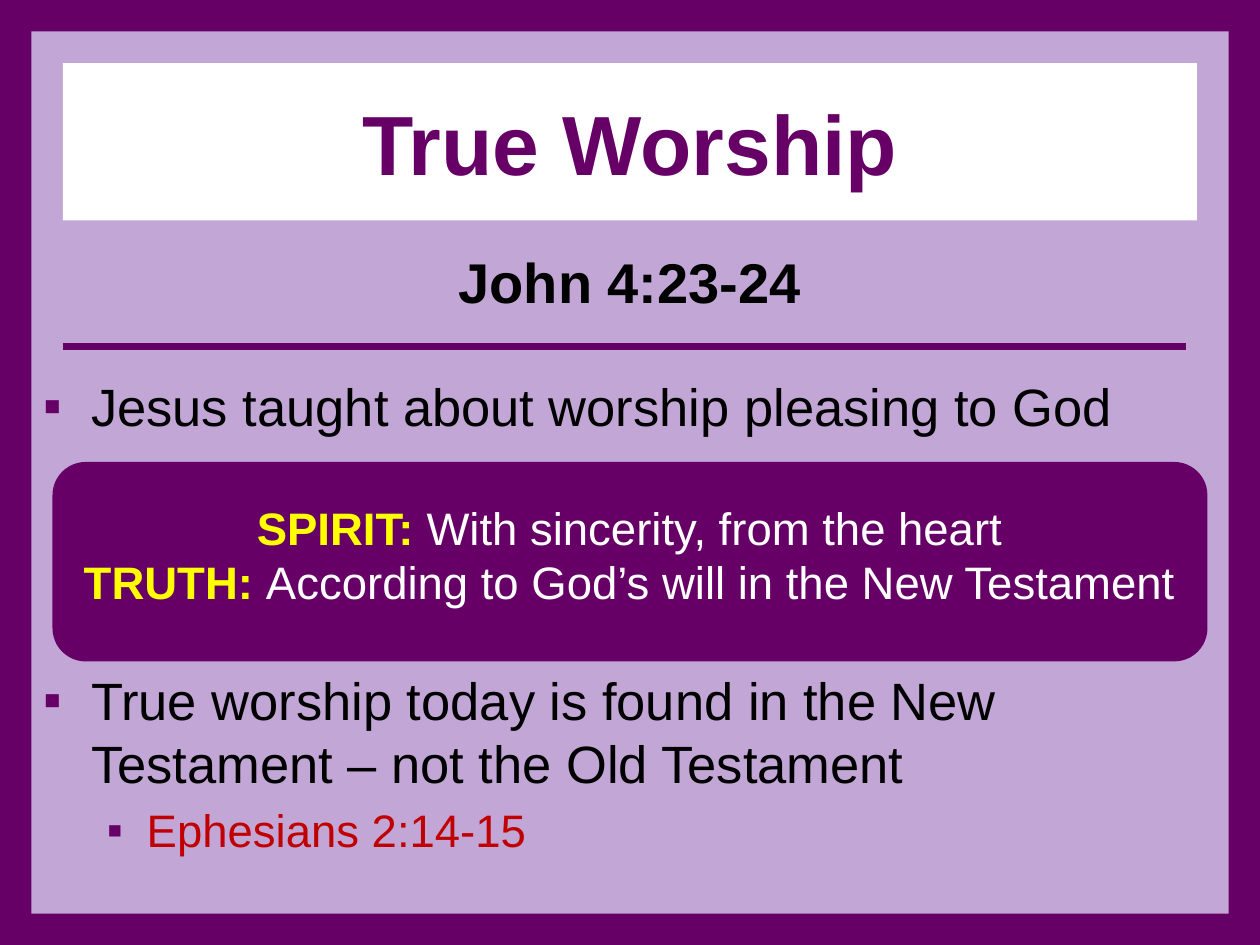
from lxml import etree
from pptx import Presentation
from pptx import util as u
from pptx.dml.color import RGBColor
from pptx.enum import shapes, text
from pptx.oxml.ns import qn

PX = 7620
PURPLE = RGBColor(0x66, 0x00, 0x66)
LILAC = RGBColor(0xC2, 0xA6, 0xD6)
WHITE = RGBColor(0xFF, 0xFF, 0xFF)
BLACK = RGBColor(0x00, 0x00, 0x00)
YELLOW = RGBColor(0xFF, 0xFF, 0x00)
RED = RGBColor(0xC0, 0x00, 0x00)


def add_block(kind, box, fill):
    shape = slide.shapes.add_shape(kind, *[value * PX for value in box])
    shape.shadow.inherit = False
    shape.fill.solid()
    shape.fill.fore_color.rgb = fill
    shape.line.fill.background()
    return shape


def style(paragraph, size, color=None, bold=None, align=None):
    paragraph.alignment = align
    paragraph.font.name = "Arial"
    paragraph.font.size = u.Pt(size)
    paragraph.font.bold = bold
    if color is not None:
        paragraph.font.color.rgb = color


presentation = Presentation()
presentation.slide_width = 1200 * PX
presentation.slide_height = 900 * PX
slide = presentation.slides.add_slide(presentation.slide_layouts[6])
slide.background.fill.solid()
slide.background.fill.fore_color.rgb = LILAC

RECTANGLE = shapes.MSO_SHAPE.RECTANGLE
CENTER = text.PP_ALIGN.CENTER

title = add_block(RECTANGLE, (60, 60, 1080, 150), WHITE)
title.text_frame.vertical_anchor = text.MSO_ANCHOR.MIDDLE
title.text_frame.text = "True Worship"
style(title.text_frame.paragraphs[0], 48, PURPLE, True, CENTER)

body = slide.shapes.add_textbox(30 * PX, 350 * PX, 1140 * PX, 510 * PX).text_frame
body.word_wrap = True
points = [
    ("Jesus taught about worship pleasing to God", 0, 30, BLACK, 0, 45, 45),
    ("True worship today is found in the New Testament – not the Old Testament",
     0, 30, BLACK, 132, 45, 45),
    ("Ephesians 2:14-15", 1, 26, RED, 5, 98, 38),
]
for index, (wording, level, size, color, before, margin, hanging) in enumerate(points):
    paragraph = body.paragraphs[0] if index == 0 else body.add_paragraph()
    paragraph.text = wording
    paragraph.level = level
    paragraph.space_before = u.Pt(before)
    properties = paragraph._p.get_or_add_pPr()
    properties.set("marL", str(margin * PX))
    properties.set("indent", str(-hanging * PX))
    bullet_color = etree.SubElement(properties, qn("a:buClr"))
    etree.SubElement(bullet_color, qn("a:srgbClr"), val=str(PURPLE))
    etree.SubElement(properties, qn("a:buFont"), typeface="Arial")
    etree.SubElement(properties, qn("a:buChar"), char="▪")
    style(paragraph, size, color)

frame_sides = [(0, 0, 30, 900), (1170, 0, 30, 900), (0, 0, 1200, 30), (0, 870, 1200, 30)]
for side in frame_sides:
    add_block(RECTANGLE, side, PURPLE)

reference = slide.shapes.add_textbox(60 * PX, 230 * PX, 1080 * PX, 77 * PX).text_frame
reference.word_wrap = True
reference.text = "John 4:23-24"
style(reference.paragraphs[0], 32, BLACK, True, CENTER)

divider = slide.shapes.add_connector(
    shapes.MSO_CONNECTOR.STRAIGHT, 60 * PX, 330 * PX, 1130 * PX, 330 * PX)
divider.line.color.rgb = PURPLE
divider.line.width = u.Pt(4.5)
etree.SubElement(divider._element.spPr, qn("a:effectLst"))

add_block(shapes.MSO_SHAPE.ROUNDED_RECTANGLE, (50, 440, 1100, 190), PURPLE)

definitions = slide.shapes.add_textbox(60 * PX, 470 * PX, 1080 * PX, 118 * PX).text_frame
definitions.word_wrap = True
meanings = [
    ("SPIRIT: ", "With sincerity, from the heart"),
    ("TRUTH: ", "According to God’s will in the New Testament"),
]
for index, (term, meaning) in enumerate(meanings):
    paragraph = definitions.paragraphs[0] if index == 0 else definitions.add_paragraph()
    style(paragraph, 26, align=CENTER)
    for wording, color, bold in ((term, YELLOW, True), (meaning, WHITE, False)):
        run = paragraph.add_run()
        run.text = wording
        run.font.color.rgb = color
        run.font.bold = bold

presentation.save("out.pptx")
